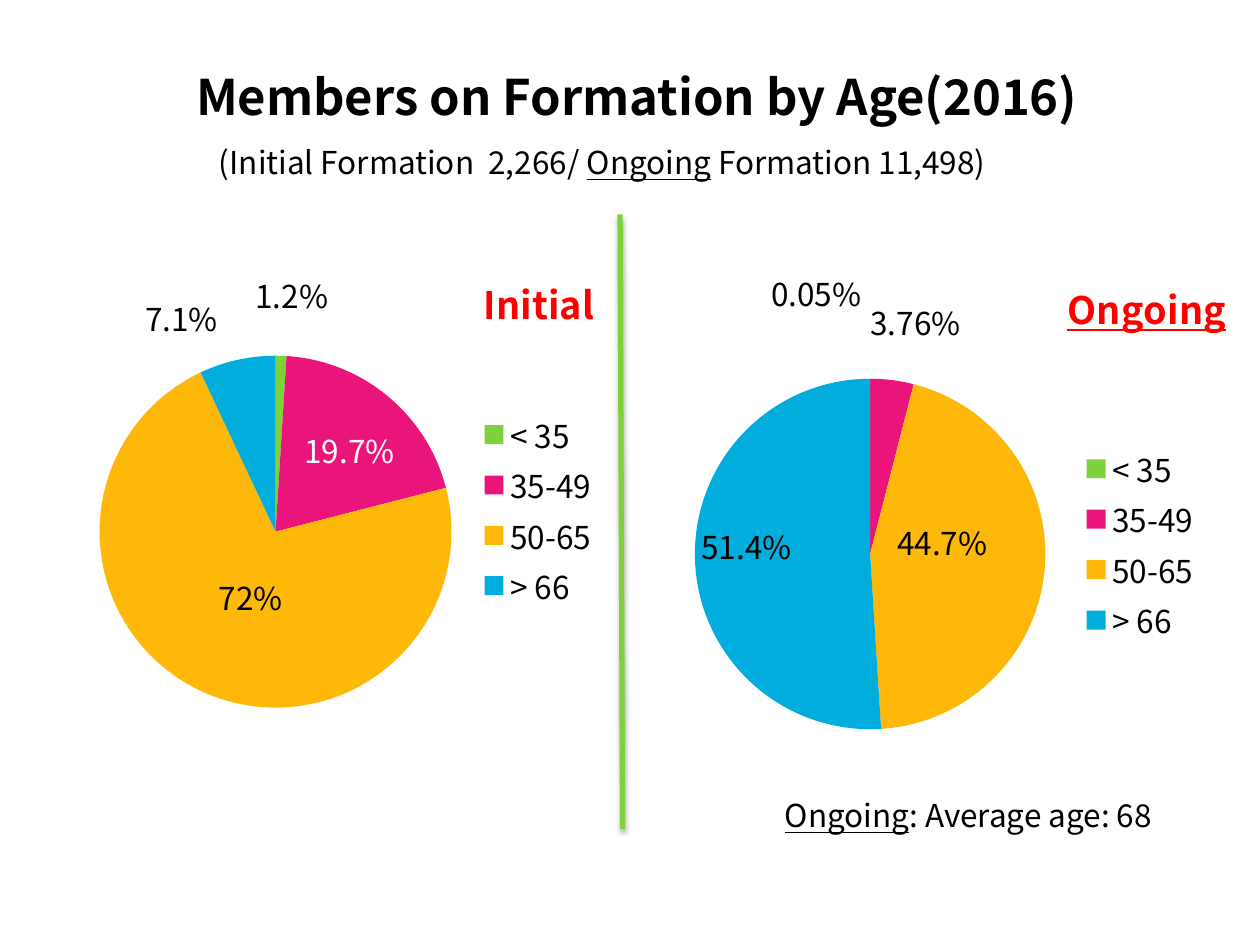
from dataclasses import dataclass
from typing import Optional

from lxml import etree
from pptx import Presentation
from pptx.chart.data import CategoryChartData
from pptx.dml.color import RGBColor
from pptx.enum.chart import XL_CHART_TYPE, XL_LEGEND_POSITION
from pptx.enum.shapes import MSO_CONNECTOR
from pptx.enum.text import MSO_ANCHOR, MSO_AUTO_SIZE, PP_ALIGN
from pptx.oxml import parse_xml
from pptx.oxml.ns import nsdecls, qn
from pptx.util import Cm, Pt

FONT = "Noto Sans CJK KR"
BLACK = RGBColor(0x00, 0x00, 0x00)
WHITE = RGBColor(0xFF, 0xFF, 0xFF)
RED = RGBColor(0xFF, 0x00, 0x00)
GREEN = RGBColor(0x7F, 0xD1, 0x3B)
PINK = RGBColor(0xEA, 0x15, 0x7A)
AMBER = RGBColor(0xFE, 0xB8, 0x0A)
BLUE = RGBColor(0x00, 0xAD, 0xDC)

AGE_COLORS = {"< 35": GREEN, "35-49": PINK, "50-65": AMBER, "> 66": BLUE}


@dataclass
class AgePie:
    """Box in cm; title, legend and plot positions as fractions of the chart."""
    title: str
    underline: bool
    box: tuple[float, float, float, float]
    values: tuple[int, ...]
    title_at: tuple[float, float]
    legend: tuple[float, float, float, float]
    plot: tuple[float, float, float, float]


@dataclass
class Label:
    text: str
    left: float
    top: float
    width: float = 2.8
    color: RGBColor = BLACK
    underlined: str = ""


PIES = [
    AgePie("Initial", False, (0.46, 4.93, 12.9, 9.65), (1, 20, 72, 7),
           (0.71, 0.04), (0.71, 0.34, 0.19, 0.43), (0.12, 0.23, 0.55, 0.74)),
    AgePie("Ongoing", True, (12.55, 5.41, 12.8, 9.68), (0, 4, 45, 51),
           (0.69, 0), (0.72, 0.36, 0.19, 0.43), (0.11, 0.23, 0.56, 0.73)),
]

LABELS = [
    Label("72%", 4.16, 11.55, 2),
    Label("19.7%", 5.89, 8.59, color=WHITE),
    Label("7.1%", 2.68, 5.92),
    Label("1.2%", 4.9, 5.46),
    Label("44.7%", 17.84, 10.44),
    Label("51.4%", 13.89, 10.52),
    Label("3.76%", 17.3, 6.01),
    Label("0.05%", 15.3, 5.41),
    Label(": Average age: 68", 15.57, 15.93, 8.94, underlined="Ongoing"),
]


def style_font(font, size: float, color: RGBColor, bold: Optional[bool] = None) -> None:
    font.name, font.size, font.bold = FONT, Pt(size), bold
    font.color.rgb = color


def add_run(p, text: str, underline: bool = False) -> None:
    r = p.add_run()
    r.text = text
    if underline:
        r.font.underline = True


def set_layout(parent, index: int, x: float, y: float,
               w: Optional[float] = None, h: Optional[float] = None) -> None:
    """Give a chart part a manual position, and a size when there is one."""
    layout = parent.find(qn("c:layout"))
    if layout is None:
        layout = etree.Element(qn("c:layout"))
        parent.insert(index, layout)
    manual = etree.SubElement(layout, qn("c:manualLayout"))
    if parent.tag == qn("c:plotArea"):
        etree.SubElement(manual, qn("c:layoutTarget")).set("val", "inner")
    for mode in ("xMode", "yMode"):
        etree.SubElement(manual, qn(f"c:{mode}")).set("val", "edge")
    for name, value in zip("xywh", (x, y, w, h)):
        if value is not None:
            etree.SubElement(manual, qn(f"c:{name}")).set("val", str(value))


def add_heading(s) -> None:
    sp = s.shapes.title
    sp.left, sp.top, sp.width, sp.height = Cm(3.5), Cm(1.22), Cm(19.61), Cm(2.64)
    tf = sp.text_frame
    tf.auto_size, tf.vertical_anchor = MSO_AUTO_SIZE.NONE, MSO_ANCHOR.TOP
    heading, counts = tf.paragraphs[0], tf.add_paragraph()
    add_run(heading, "Members on Formation by Age(2016)")
    add_run(counts, "(Initial Formation  2,266/ ")
    add_run(counts, "Ongoing", True)
    add_run(counts, " Formation 11,498)")
    style_font(heading.font, 28, BLACK, True)
    style_font(counts.font, 18, BLACK, False)
    counts.space_before = Pt(10)
    for p, indent in ((heading, 0.2), (counts, 0.66)):
        p.alignment = PP_ALIGN.LEFT
        p._p.get_or_add_pPr().set("marL", str(Cm(indent)))


def add_pie(s, pie: AgePie) -> None:
    data = CategoryChartData()
    data.categories = list(AGE_COLORS)
    data.add_series("Series 1", pie.values)
    chart = s.shapes.add_chart(XL_CHART_TYPE.PIE, *map(Cm, pie.box), data).chart
    style_font(chart.font, 18, BLACK)

    # Slices
    plot = chart.plots[0]
    plot.vary_by_categories = True
    for i, color in enumerate(AGE_COLORS.values()):
        fmt = plot.series[0].points[i].format
        fmt.fill.solid()
        fmt.fill.fore_color.rgb = color
        fmt.line.fill.background()
    set_layout(chart._chartSpace.chart.plotArea, 0, *pie.plot)

    # Title
    chart.has_title = True
    p = chart.chart_title.text_frame.paragraphs[0]
    add_run(p, pie.title, pie.underline)
    style_font(p.runs[0].font, 21.6, RED, True)
    set_layout(chart.chart_title._element, 1, *pie.title_at)

    # Legend
    chart.has_legend = True
    chart.legend.position = XL_LEGEND_POSITION.RIGHT
    chart.legend.include_in_layout = False
    set_layout(chart.legend._element, 1, *pie.legend)


def add_label(s, label: Label) -> None:
    sp = s.shapes.add_textbox(Cm(label.left), Cm(label.top), Cm(label.width), Cm(1.02))
    tf = sp.text_frame
    tf.word_wrap = True
    p = tf.paragraphs[0]
    if label.underlined:
        add_run(p, label.underlined, True)
    add_run(p, label.text)
    style_font(p.font, 18, label.color)


def add_divider(s) -> None:
    line = s.shapes.add_connector(MSO_CONNECTOR.STRAIGHT,
                                  Cm(12.5), Cm(4.32), Cm(12.55), Cm(16.71))
    line.line.color.rgb = GREEN
    line.line.width = Pt(3)
    line._element.spPr.append(parse_xml(
        f'<a:effectLst {nsdecls("a")}>'
        f'<a:outerShdw blurRad="{Pt(3.1)}" dist="{Pt(1.8)}" dir="5400000" rotWithShape="0">'
        '<a:srgbClr val="000000"><a:alpha val="35000"/></a:srgbClr>'
        '</a:outerShdw></a:effectLst>'))


def main() -> None:
    prs = Presentation()
    prs.slide_width, prs.slide_height = Cm(25.4), Cm(19.05)
    s = prs.slides.add_slide(prs.slide_layouts[5])
    add_heading(s)
    for pie in PIES:
        add_pie(s, pie)
    for label in LABELS:
        add_label(s, label)
    add_divider(s)
    prs.save("out.pptx")


if __name__ == "__main__":
    main()
